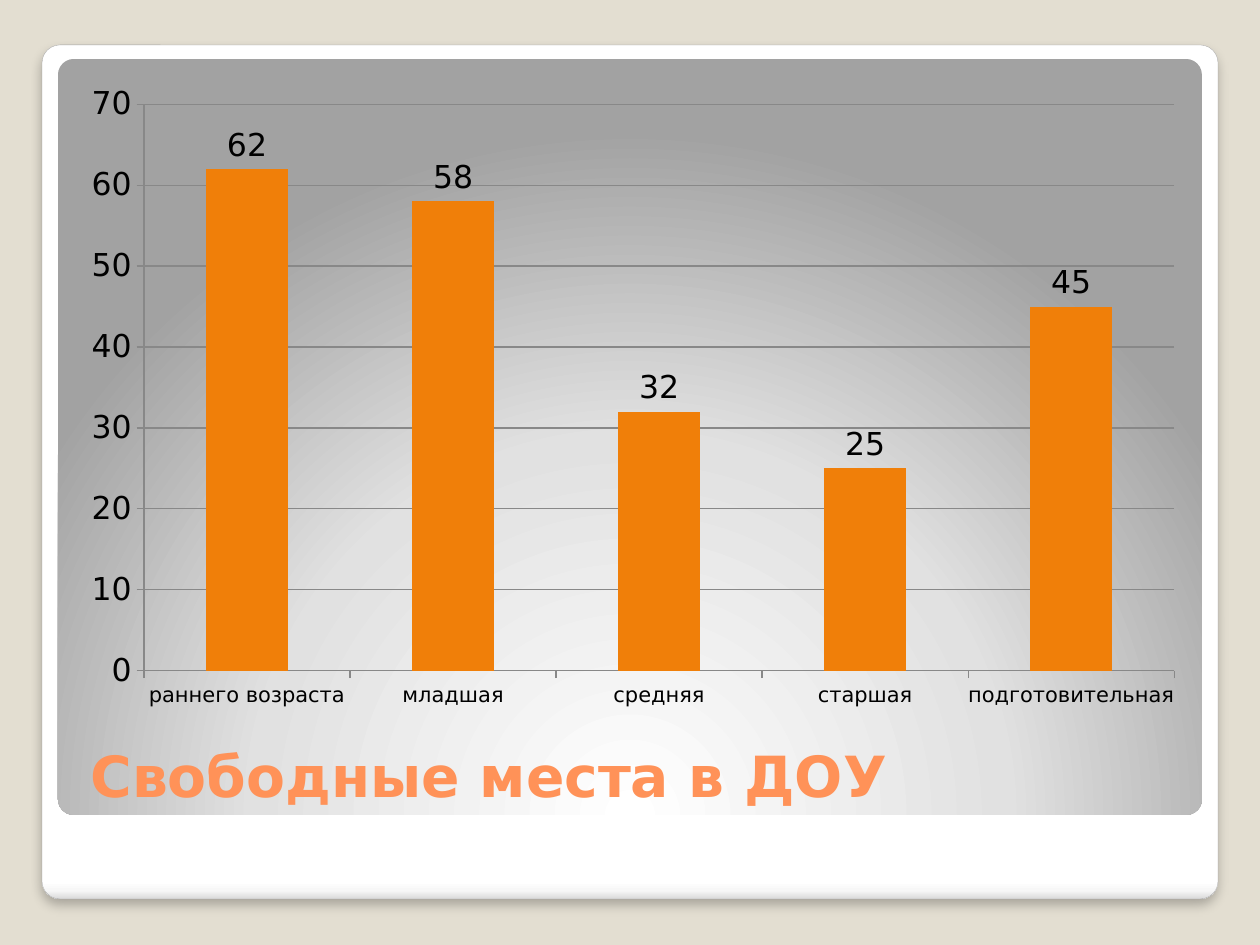
from lxml import etree
from pptx import Presentation
from pptx.chart.data import CategoryChartData
from pptx.dml.color import RGBColor
from pptx.enum.chart import XL_CHART_TYPE, XL_LABEL_POSITION, XL_TICK_MARK
from pptx.enum.shapes import MSO_SHAPE
from pptx.enum.text import MSO_ANCHOR, MSO_AUTO_SIZE, PP_ALIGN
from pptx.oxml import parse_xml
from pptx.oxml.ns import nsdecls, qn
from pptx.util import Emu, Pt

COLUMN = XL_CHART_TYPE.COLUMN_CLUSTERED
ABOVE = XL_LABEL_POSITION.OUTSIDE_END
OUT, NONE = XL_TICK_MARK.OUTSIDE, XL_TICK_MARK.NONE
ROUND = MSO_SHAPE.ROUNDED_RECTANGLE
BOTTOM, LEFT, FIXED = MSO_ANCHOR.BOTTOM, PP_ALIGN.LEFT, MSO_AUTO_SIZE.NONE

TITLE = "Свободные места в ДОУ"
PLACES = {
    "раннего возраста": 62,
    "младшая": 58,
    "средняя": 32,
    "старшая": 25,
    "подготовительная": 45,
}
SIZE = (1260, 945)
BOX = {
    "card": (42, 45, 1176, 854),
    "panel": (58, 59, 1144, 756),
    "title": (78, 731, 1128, 84),
    "chart": (69, 73, 1128, 648),
}
THEME = {
    "font": "DejaVu Sans",
    "back": "E3DED1", "edge": "A4A4A4", "title": "FF9258",
    "text": "000000", "bar": "F07F09", "grid": "888888",
    "card": [(0, "FFFFFF"), (98, "FFFFFF"), (99, "F7F7F7"), (100, "DADADA")],
    "panel": [(0, "FFFFFF"), (55, "E1E1E1"), (100, "A2A2A2")],
    "head": 32.4, "label": 18, "group": 12,
}
DOWN = '<a:lin ang="5400000" scaled="0"/>'
GLOW = ('<a:path path="circle"><a:fillToRect l="50000" t="175000" '
        'r="50000" b="-75000"/></a:path>')


def px(n):
    return Emu(n * 914400 // 126)


def tint(name):
    return RGBColor.from_string(THEME[name])


def place(name):
    return [px(n) for n in BOX[name]]


def style(font, size, color):
    font.name = THEME["font"]
    font.size = Pt(THEME[size])
    font.color.rgb = tint(color)


def add_plate(slide, name, shade):
    plate = slide.shapes.add_shape(ROUND, *place(name))
    plate.adjustments[0] = 0.021
    plate.shadow.inherit = False
    plate.line.fill.background()
    plate.fill.background()
    stops = "".join(
        f'<a:gs pos="{pos * 1000}"><a:srgbClr val="{color}"/></a:gs>'
        for pos, color in THEME[name])
    props = plate.element.spPr
    props.replace(props.find(qn("a:noFill")), parse_xml(
        f'<a:gradFill {nsdecls("a")} rotWithShape="1">'
        f'<a:gsLst>{stops}</a:gsLst>{shade}</a:gradFill>'))
    return plate


def add_edge(plate):
    plate.line.color.rgb = tint("edge")
    plate.line.width = Pt(0.16)
    effects = plate.element.spPr.find(qn("a:effectLst"))
    shadow = etree.SubElement(
        effects, qn("a:outerShdw"), blurRad=str(Pt(6)), dist=str(Pt(4)),
        dir="5400000", algn="t", rotWithShape="0")
    color = etree.SubElement(shadow, qn("a:srgbClr"), val=THEME["text"])
    etree.SubElement(color, qn("a:alpha"), val="25000")


def add_title(slide):
    title = slide.shapes.title
    title.left, title.top, title.width, title.height = place("title")
    frame = title.text_frame
    frame.text = TITLE
    frame.auto_size = FIXED
    frame.vertical_anchor = BOTTOM
    line = frame.paragraphs[0]
    line.alignment = LEFT
    style(line.runs[0].font, "head", "title")
    line.runs[0].font.bold = True
    slide.shapes.element.append(title.element)


def add_bars(slide):
    data = CategoryChartData()
    data.categories = list(PLACES)
    data.add_series("Series 1", list(PLACES.values()))
    chart = slide.shapes.add_chart(COLUMN, *place("chart"), data).chart
    chart.has_legend = chart.has_title = False
    style(chart.font, "label", "text")
    groups, scale = chart.category_axis, chart.value_axis
    for axis in (groups, scale):
        axis.major_tick_mark, axis.minor_tick_mark = OUT, NONE
        axis.format.line.color.rgb = tint("grid")
    style(groups.tick_labels.font, "group", "text")
    scale.minimum_scale, scale.maximum_scale, scale.major_unit = 0, 70, 10
    scale.has_major_gridlines = True
    scale.major_gridlines.format.line.color.rgb = tint("grid")
    plot = chart.plots[0]
    plot.gap_width, plot.vary_by_categories = 150, False
    fill = plot.series[0].format.fill
    fill.solid()
    fill.fore_color.rgb = tint("bar")
    plot.has_data_labels = True
    plot.data_labels.show_value = True
    plot.data_labels.position = ABOVE
    style(plot.data_labels.font, "label", "text")


def main():
    deck = Presentation()
    deck.slide_width, deck.slide_height = map(px, SIZE)
    slide = deck.slides.add_slide(deck.slide_layouts[5])
    slide.background.fill.solid()
    slide.background.fill.fore_color.rgb = tint("back")
    add_edge(add_plate(slide, "card", DOWN))
    add_plate(slide, "panel", GLOW)
    add_title(slide)
    add_bars(slide)
    deck.save("out.pptx")


if __name__ == "__main__":
    main()
